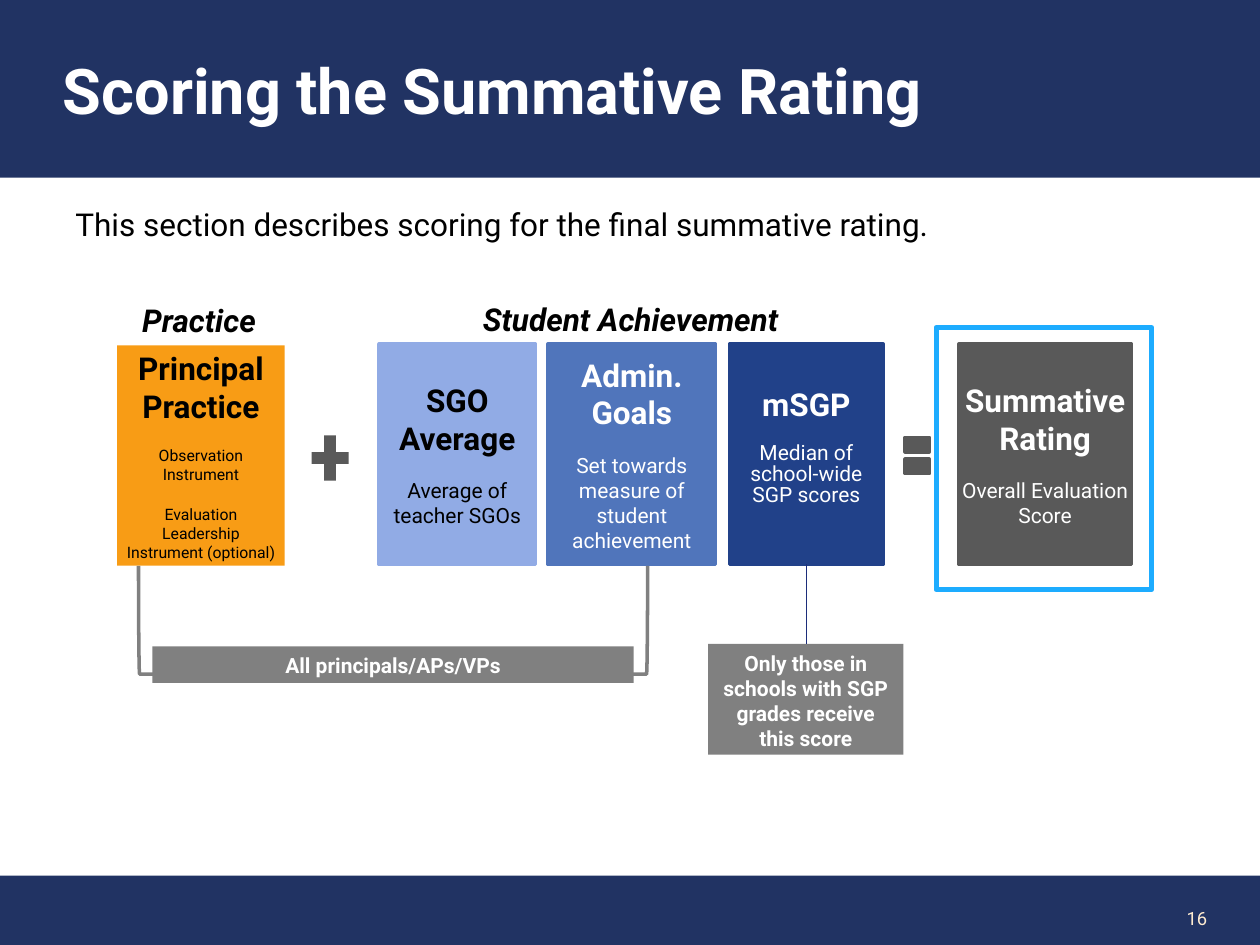
from dataclasses import dataclass

from lxml.etree import SubElement
from pptx import Presentation
from pptx.dml.color import RGBColor
from pptx.enum.shapes import MSO_CONNECTOR, MSO_SHAPE
from pptx.enum.text import MSO_ANCHOR, PP_ALIGN
from pptx.oxml.ns import qn
from pptx.util import Inches, Pt


@dataclass(frozen=True)
class Theme:
    font: str = "Roboto"
    navy: str = "213363"
    white: str = "FFFFFF"
    black: str = "000000"
    cream: str = "FEEBD0"
    orange: str = "F89C15"
    light_blue: str = "91ABE5"
    mid_blue: str = "5075BB"
    dark_blue: str = "214189"
    connector_blue: str = "1C2D7A"
    highlight: str = "1DACFF"
    charcoal: str = "595959"
    gray: str = "808080"
    title_size: float = 36
    heading_size: float = 18
    detail_size: float = 12
    number_size: float = 10.5
    small_size: float = 9


THEME = Theme()


@dataclass(frozen=True)
class Area:
    left: float
    top: float
    width: float
    height: float

    def lengths(self) -> list:
        return [Inches(n) for n in (self.left, self.top, self.width, self.height)]


@dataclass(frozen=True)
class Line:
    text: str
    size: float
    color: str
    bold: bool = False
    italic: bool = False


@dataclass(frozen=True)
class ScoreCard:
    area: Area
    fill: str
    text_color: str
    heading: str
    details: tuple[str, ...]
    side_inset: float
    detail_size: float = THEME.detail_size
    outlined: bool = True
    line_spacing: float | None = None


def write(shape, lines: list[Line], align=PP_ALIGN.CENTER, anchor=MSO_ANCHOR.TOP,
          left_inset: float = 0.1, right_inset: float = 0.1,
          space_after: float = 0, line_spacing: float | None = None) -> None:
    frame = shape.text_frame
    frame.text = "\n".join(line.text for line in lines)
    frame.word_wrap = True
    frame.vertical_anchor = anchor
    frame.margin_left, frame.margin_right = Inches(left_inset), Inches(right_inset)
    frame.margin_top = frame.margin_bottom = Inches(0.05)
    for paragraph, line in zip(frame.paragraphs, lines):
        paragraph.alignment = align
        paragraph.space_after = Pt(space_after)
        if line_spacing:
            paragraph.line_spacing = Pt(line_spacing)
        for run in paragraph.runs:
            font = run.font
            font.name, font.size = THEME.font, Pt(line.size)
            font.bold, font.italic = line.bold, line.italic
            font.color.rgb = RGBColor.from_string(line.color)


def add_figure(slide, area: Area, fill: str | None = None, outline: str | None = None,
               weight: float = 2, preset=MSO_SHAPE.RECTANGLE):
    shape = slide.shapes.add_shape(preset, *area.lengths())
    shape.shadow.inherit = False
    if fill:
        shape.fill.solid()
        shape.fill.fore_color.rgb = RGBColor.from_string(fill)
    else:
        shape.fill.background()
    if outline:
        shape.line.color.rgb = RGBColor.from_string(outline)
        shape.line.width = Pt(weight)
    else:
        shape.line.fill.background()
    return shape


def add_label(slide, area: Area, line: Line, **layout) -> None:
    write(slide.shapes.add_textbox(*area.lengths()), [line], **layout)


def add_score_card(slide, card: ScoreCard) -> None:
    shape = add_figure(slide, card.area, card.fill, card.fill if card.outlined else None)
    lines = [Line(card.heading, THEME.heading_size, card.text_color, bold=True)]
    lines += [Line(detail, card.detail_size, card.text_color) for detail in card.details]
    write(shape, lines, anchor=MSO_ANCHOR.MIDDLE, left_inset=card.side_inset,
          right_inset=card.side_inset, space_after=12, line_spacing=card.line_spacing)


def add_audience_note(slide, area: Area, text: str) -> None:
    """Gray box saying who receives the scores joined to it."""
    note = add_figure(slide, area, THEME.gray)
    write(note, [Line(text, THEME.detail_size, THEME.white, bold=True)])


def add_connector_line(slide, x: float, start_y: float, end_y: float) -> None:
    connector = slide.shapes.add_connector(
        MSO_CONNECTOR.STRAIGHT, Inches(x), Inches(start_y), Inches(x), Inches(end_y))
    connector.line.color.rgb = RGBColor.from_string(THEME.connector_blue)
    connector.line.width = Pt(0.75)
    SubElement(connector._element.spPr, qn("a:effectLst"))


CARD_TOP, CARD_HEIGHT = 2.73, 1.75

CARDS = [
    ScoreCard(Area(0.93, 2.74, 1.33, CARD_HEIGHT), THEME.orange, THEME.black,
              "Principal Practice",
              ("Observation Instrument", "Evaluation Leadership Instrument (optional)"),
              0.07, detail_size=THEME.small_size, outlined=False),
    ScoreCard(Area(5.79, CARD_TOP, 1.22, CARD_HEIGHT), THEME.dark_blue, THEME.white,
              "mSGP", ("Median of school-wide SGP scores",), 0.03, line_spacing=12),
    ScoreCard(Area(4.35, CARD_TOP, 1.33, CARD_HEIGHT), THEME.mid_blue, THEME.white,
              "Admin. Goals", ("Set towards measure of student achievement",), 0.03),
    ScoreCard(Area(3.01, CARD_TOP, 1.24, CARD_HEIGHT), THEME.light_blue, THEME.black,
              "SGO Average", ("Average of teacher SGOs",), 0.05),
    ScoreCard(Area(7.61, CARD_TOP, 1.37, CARD_HEIGHT), THEME.charcoal, THEME.white,
              "Summative Rating", ("Overall Evaluation Score",), 0),
]

GROUP_HEADINGS = [
    (Area(0.25, 2.34, 2.66, 0.39), "Practice"),
    (Area(3.01, 2.33, 3.99, 0.39), "Student Achievement"),
]


def main() -> None:
    presentation = Presentation()
    presentation.slide_width, presentation.slide_height = Inches(10), Inches(7.5)
    slide = presentation.slides.add_slide(presentation.slide_layouts[6])

    add_figure(slide, Area(0, 6.95, 10, 0.55), THEME.navy)
    add_label(slide, Area(8.22, 7.09, 1.46, 0.4),
              Line("16", THEME.number_size, THEME.cream),
              align=PP_ALIGN.RIGHT, anchor=MSO_ANCHOR.MIDDLE)
    title = add_figure(slide, Area(0, 0, 10, 1.41), THEME.navy)
    write(title, [Line("Scoring the Summative Rating", THEME.title_size, THEME.white, bold=True)],
          align=PP_ALIGN.LEFT, anchor=MSO_ANCHOR.MIDDLE, left_inset=0.5)
    add_label(slide, Area(0.5, 1.58, 7.5, 0.4),
              Line("This section describes scoring for the final summative rating.",
                   THEME.heading_size, THEME.black), align=PP_ALIGN.LEFT)

    for area, heading in GROUP_HEADINGS:
        add_label(slide, area,
                  Line(heading, THEME.heading_size, THEME.black, bold=True, italic=True))
    for card in CARDS:
        add_score_card(slide, card)
    add_figure(slide, Area(7.15, 3.37, 0.26, 0.49), THEME.charcoal, THEME.charcoal,
               preset=MSO_SHAPE.MATH_EQUAL)
    add_figure(slide, Area(2.42, 3.39, 0.4, 0.49), THEME.charcoal, preset=MSO_SHAPE.MATH_PLUS)

    bracket = add_figure(slide, Area(2.69, 2.9, 0.86, 4.04), outline=THEME.gray,
                         preset=MSO_SHAPE.LEFT_BRACKET)
    bracket.adjustments[0] = 0.01
    bracket.rotation = 270
    add_audience_note(slide, Area(1.21, 5.13, 3.82, 0.29), "All principals/APs/VPs")
    add_audience_note(slide, Area(5.62, 5.11, 1.55, 0.88),
                      "Only those in schools with SGP grades receive this score")
    add_connector_line(slide, 6.4, 5.11, CARD_TOP + CARD_HEIGHT)
    add_figure(slide, Area(7.43, 2.6, 1.71, 2.08), outline=THEME.highlight, weight=3)

    presentation.save("out.pptx")


if __name__ == "__main__":
    main()
